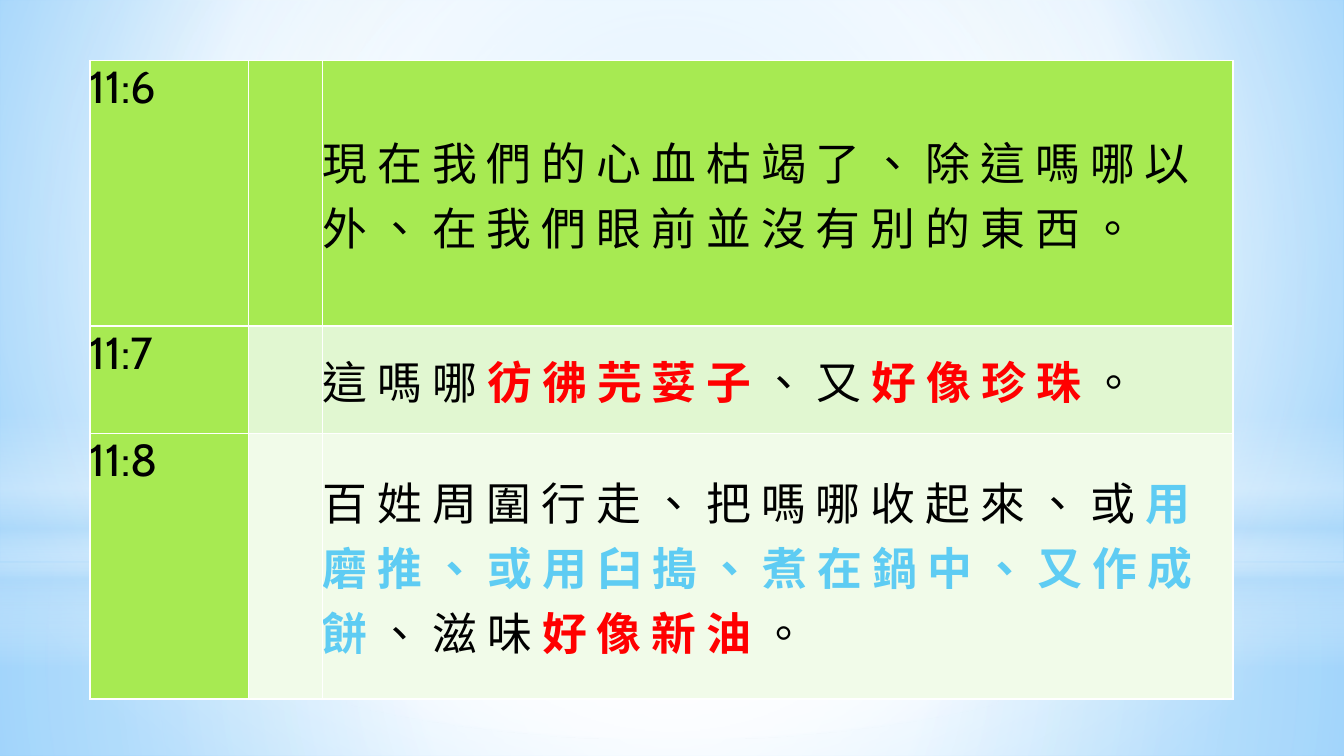
"""Builds a slide with a three-verse table on a soft blue sky."""
from lxml.etree import SubElement
from pptx import Presentation
from pptx.dml.color import RGBColor
from pptx.enum.lang import MSO_LANGUAGE_ID
from pptx.enum.shapes import MSO_SHAPE
from pptx.enum.text import MSO_ANCHOR
from pptx.oxml.ns import qn
from pptx.util import Emu, Pt

PX = 5715
FONT = "Cabin"
COLORS = {
    "black": "000000", "white": "FFFFFF", "red": "FF0000", "cyan": "5ECCF3",
    "green": "A7EA52", "light": "E1F7D1", "pale": "F1FBE9",
    "sky": "9ED5FF", "deep": "5BB9FF", "haze": "B4DCFA",
}
CENTER = (50, 50, 50, 50)
SKY = [(0, "sky", 100), (60, "white", 100), (100, "deep", 100)]
CLOUDS = [
    (MSO_SHAPE.RECTANGLE, (0, 670, 1600, 230), CENTER,
     [(0, "white", 91), (37, "white", 76), (100, "haze", 79)]),
    (MSO_SHAPE.RECTANGLE, (0, 0, 1600, 670), CENTER,
     [(0, "white", 89), (48, "white", 62), (100, "haze", 79)]),
    (MSO_SHAPE.RECTANGLE, (0, 494, 1600, 300), None,
     [(0, "white", 0), (29, "white", 30), (45, "haze", 40),
      (55, "white", 26), (65, "haze", 60), (100, "white", 0)]),
    (MSO_SHAPE.OVAL, (0, 210, 1600, 670), CENTER,
     [(0, "white", 100), (56, "white", 0)]),
]
COLUMNS = (189, 88, 1084)
VERSES = [
    ("11:6", 316, "green", [
        ("現 在 我 們 的 心 血 枯 竭 了 、 除 這 嗎 哪 以 外 、 在 我 們 眼 前 並 沒 有 別 的 東 西 。", "black")]),
    ("11:7", 128, "light", [
        ("這 嗎 哪 ", "black"), ("彷 彿 芫 荽 子 ", "red"), ("、 又 ", "black"),
        ("好 像 珍 珠 ", "red"), ("。", "black")]),
    ("11:8", 316, "pale", [
        ("百 姓 周 圍 行 走 、 把 嗎 哪 收 起 來 、 或 ", "black"),
        ("用 磨 推 、 或 用 臼 搗 、 煮 在 鍋 中 、 又 作 成 餅 ", "cyan"),
        ("、 滋 味 ", "black"), ("好 像 新 油 ", "red"), ("。", "black")]),
]


def px(value):
    return Emu(value * PX)


def rgb(name):
    return RGBColor.from_string(COLORS[name])


def set_gradient(fill, element, stops, focus):
    fill.gradient()
    gradient = element.find(".//" + qn("a:gradFill"))
    for child in list(gradient):
        gradient.remove(child)
    stop_list = SubElement(gradient, qn("a:gsLst"))
    for position, name, opacity in stops:
        stop = SubElement(stop_list, qn("a:gs"), pos=str(position * 1000))
        color = SubElement(stop, qn("a:srgbClr"), val=COLORS[name])
        if opacity < 100:
            SubElement(color, qn("a:alpha"), val=str(opacity * 1000))
    if focus:
        shade = SubElement(gradient, qn("a:path"), {"path": "circle"})
        sides = {side: str(part * 1000) for side, part in zip("ltrb", focus)}
        SubElement(shade, qn("a:fillToRect"), sides)
    else:
        SubElement(gradient, qn("a:lin"), ang="5400000", scaled="0")


def add_cloud(page, kind, place, focus, stops):
    cloud = page.shapes.add_shape(kind, *map(px, place))
    cloud.shadow.inherit = False
    cloud.line.fill.background()
    set_gradient(cloud.fill, cloud.element, stops, focus)


def fill_cell(cell, color, spans):
    cell.fill.solid()
    cell.fill.fore_color.rgb = rgb(color)
    cell.margin_left = cell.margin_right = 0
    cell.margin_top = cell.margin_bottom = 0
    para = cell.text_frame.paragraphs[0]
    for text, name in spans:
        span = para.add_run()
        span.text = text
        span.font.name = FONT
        span.font.size = Pt(24)
        span.font.bold = name != "black"
        span.font.color.rgb = rgb(name)
        span.font.language_id = MSO_LANGUAGE_ID.TRADITIONAL_CHINESE


def add_verses(page):
    height = sum(verse[1] for verse in VERSES)
    frame = page.shapes.add_table(len(VERSES), len(COLUMNS), px(107), px(72),
                                  px(sum(COLUMNS)), px(height))
    table = frame.table
    table.first_col = True
    for column, width in zip(table.columns, COLUMNS):
        column.width = px(width)
    for index, (number, height, color, spans) in enumerate(VERSES):
        table.rows[index].height = px(height)
        fill_cell(table.cell(index, 0), "green", [(number, "black")])
        fill_cell(table.cell(index, 1), color, [])
        fill_cell(table.cell(index, 2), color, spans)
        table.cell(index, 2).vertical_anchor = MSO_ANCHOR.MIDDLE


def main():
    deck = Presentation()
    deck.slide_width, deck.slide_height = px(1600), px(900)
    page = deck.slides.add_slide(deck.slide_layouts[6])
    set_gradient(page.background.fill, page.element, SKY, (20, 10, 20, 60))
    for kind, place, focus, stops in CLOUDS:
        add_cloud(page, kind, place, focus, stops)
    add_verses(page)
    deck.save("out.pptx")


if __name__ == "__main__":
    main()
